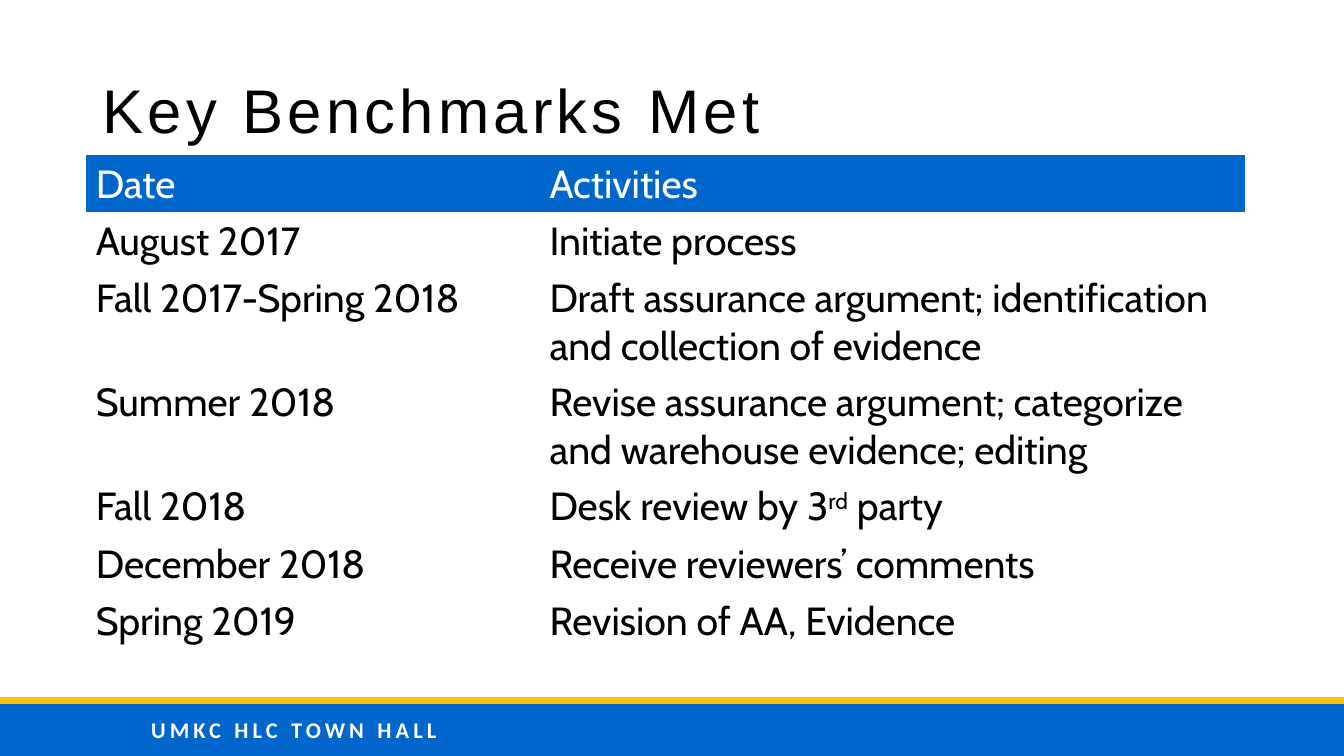
import pptx
import pptx.dml.color
import pptx.enum.shapes
import pptx.enum.text
import pptx.oxml.ns
import pptx.util
from lxml import etree
from pptx.util import Inches

BLUE, GOLD, WHITE, BLACK = "0066CC", "FFC000", "FFFFFF", "000000"
NO_STYLE_NO_GRID = "{2D5ABB26-0587-4C30-8999-92F81FD0307C}"


def rgb(value):
    return pptx.dml.color.RGBColor.from_string(value)


def add_spaced_text(left, top, width, height, text, font_name, size, color):
    """Add a one-line text box with letters spaced 3 pt apart."""
    box = slide.shapes.add_textbox(Inches(left), Inches(top), Inches(width), Inches(height))
    box.text_frame.word_wrap = True
    paragraph = box.text_frame.paragraphs[0]
    run = paragraph.add_run()
    run.text = text
    run._r.get_or_add_rPr().set("spc", "300")
    paragraph.font.name = font_name
    paragraph.font.size = pptx.util.Pt(size)
    paragraph.font.color.rgb = rgb(color)
    return box.text_frame


prs = pptx.Presentation()
prs.slide_width = Inches(13.33)
prs.slide_height = Inches(7.5)
slide = prs.slides.add_slide(prs.slide_layouts[6])

# Footer band
footer = slide.shapes.add_shape(
    pptx.enum.shapes.MSO_SHAPE.RECTANGLE, 0, Inches(6.95), prs.slide_width, Inches(0.55))
footer.shadow.inherit = False
footer.fill.solid()
footer.fill.fore_color.rgb = rgb(BLUE)
footer.line.fill.background()

event = add_spaced_text(1.4, 7.06, 11.93, 0.4, "UMKC HLC TOWN HALL", "Calibri", 16, WHITE)
event.paragraphs[0].font.bold = True

gold_rule = slide.shapes.add_connector(
    pptx.enum.shapes.MSO_CONNECTOR.STRAIGHT, 0, Inches(6.95), prs.slide_width, Inches(6.95))
gold_rule.line.color.rgb = rgb(GOLD)
gold_rule.line.width = pptx.util.Pt(4.5)
etree.SubElement(gold_rule._element.spPr, pptx.oxml.ns.qn("a:effectLst"))

# Title
title = add_spaced_text(0.92, 0.4, 11.5, 1.45, "Key Benchmarks Met", "Arial", 44, BLACK)
title.vertical_anchor = pptx.enum.text.MSO_ANCHOR.MIDDLE
title.paragraphs[0].line_spacing = 0.9

# Benchmarks: each cell is a list of runs, every second run is superscript
benchmarks = [
    (["Date"], ["Activities"]),
    (["August 2017"], ["Initiate process"]),
    (["Fall 2017-Spring 2018"],
     ["Draft assurance argument; identification and collection of evidence"]),
    (["Summer 2018"],
     ["Revise assurance argument; categorize and warehouse evidence; editing"]),
    (["Fall 2018"], ["Desk review by 3", "rd", " party"]),
    (["December 2018"], ["Receive reviewers’ comments"]),
    (["Spring 2019"], ["Revision of AA, Evidence"]),
]
row_height = Inches(0.41)
table = slide.shapes.add_table(
    len(benchmarks), 2, Inches(0.85), Inches(1.54), Inches(11.5),
    row_height * len(benchmarks)).table
table.horz_banding = False
table.first_row = False
table._tbl.tblPr.find(pptx.oxml.ns.qn("a:tableStyleId")).text = NO_STYLE_NO_GRID
for column, width in zip(table.columns, (4.5, 7)):
    column.width = Inches(width)

for row, benchmark in enumerate(benchmarks):
    is_header = row == 0
    for col, pieces in enumerate(benchmark):
        cell = table.cell(row, col)
        if is_header:
            cell.fill.solid()
            cell.fill.fore_color.rgb = rgb(BLUE)
        else:
            cell.fill.background()
        paragraph = cell.text_frame.paragraphs[0]
        for index, piece in enumerate(pieces):
            run = paragraph.add_run()
            run.text = piece
            if index % 2:
                run._r.get_or_add_rPr().set("baseline", "30000")
        paragraph.font.name = "Cabin"
        paragraph.font.size = pptx.util.Pt(28)
        paragraph.font.color.rgb = rgb(WHITE if is_header else BLACK)

prs.save("out.pptx")
